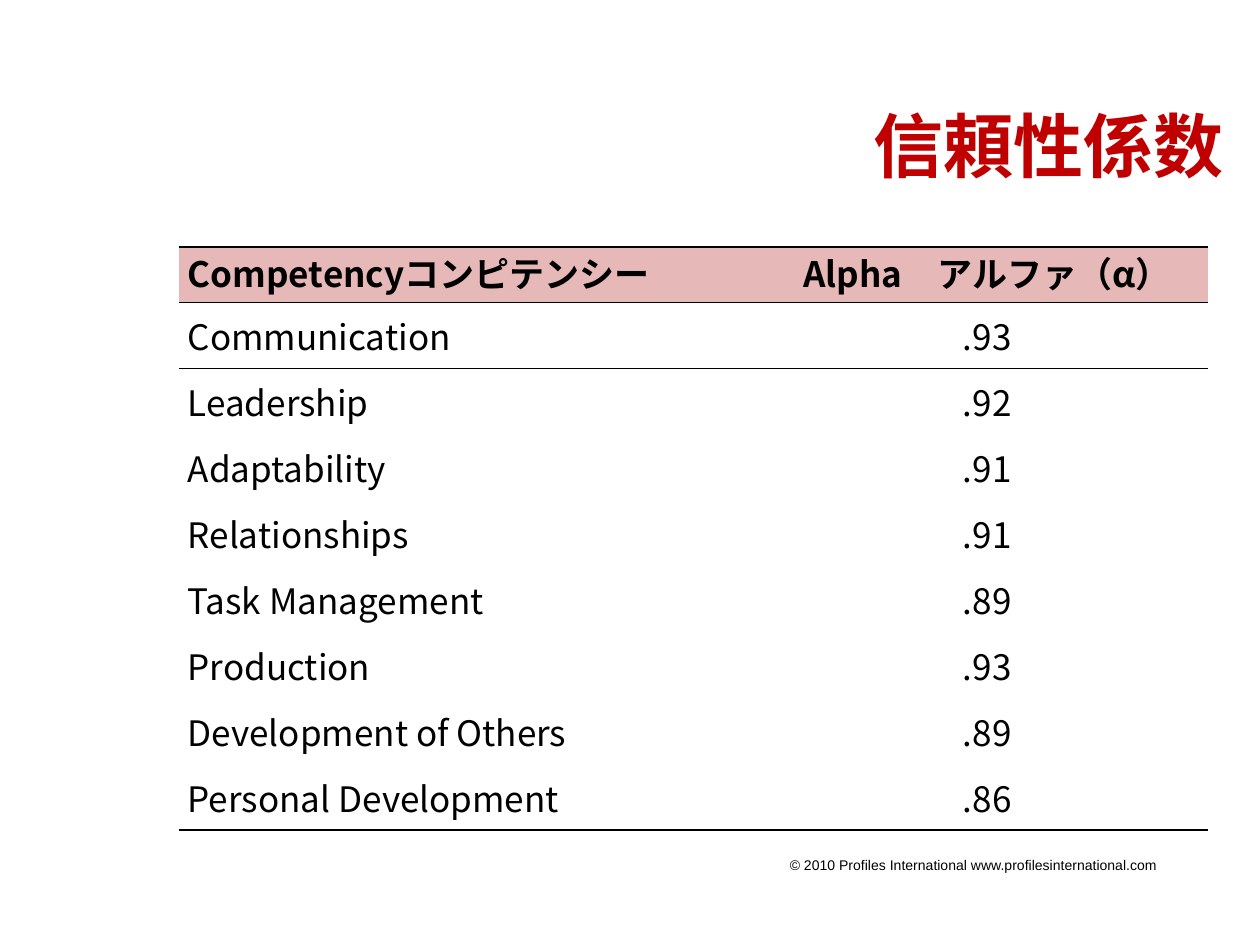
from lxml.etree import SubElement
from pptx import Presentation
from pptx.dml.color import RGBColor
from pptx.enum.text import MSO_ANCHOR as Anchor, PP_ALIGN as Align
from pptx.oxml.ns import qn
from pptx.util import Inches, Pt

COLORS = {"title": "C00000", "text": "000000", "head": "E6B9B8"}
SANS = "Noto Sans CJK JP"
PLAIN = "{2D5ABB26-0587-4C30-8999-92F81FD0307C}"  # table style without lines or fills
ROWS = [
    ("Competencyコンピテンシー", "Alpha　アルファ（α）"),
    ("Communication", ".93"),
    ("Leadership", ".92"),
    ("Adaptability", ".91"),
    ("Relationships", ".91"),
    ("Task Management", ".89"),
    ("Production", ".93"),
    ("Development of Others", ".89"),
    ("Personal Development", ".86"),
]


def write(frame, text, size, color="text", face=SANS, bold=False, align=Align.LEFT):
    frame.text = text
    para = frame.paragraphs[0]
    para.alignment = align
    for run in para.runs:
        font = run.font
        font.size, font.bold, font.name = Pt(size), bold, face
        font.color.rgb = RGBColor.from_string(COLORS[color])
        SubElement(run._r.get_or_add_rPr(), qn("a:ea"), typeface=face)


def add_rule(cell, side):
    """Draw a thin line on the "T" (top) or "B" (bottom) side of a cell."""
    props = cell._tc.get_or_add_tcPr()
    line = SubElement(props, qn(f"a:ln{side}"), w=str(Pt(1)))
    fill = SubElement(line, qn("a:solidFill"))
    SubElement(fill, qn("a:srgbClr"), val=COLORS["text"])


def fill_cell(cell, text, row, col):
    head, last = row == 0, row == len(ROWS) - 1
    cell.margin_left = cell.margin_right = Inches(0.07)
    cell.margin_top = cell.margin_bottom = 0
    cell.vertical_anchor = Anchor.TOP if head else Anchor.MIDDLE
    write(cell.text_frame, text, 20, bold=head,
          align=Align.CENTER if col else Align.LEFT)
    if row <= 1:
        add_rule(cell, "T")
    if head or last:
        add_rule(cell, "B")
    if head:
        cell.fill.solid()
        cell.fill.fore_color.rgb = RGBColor.from_string(COLORS["head"])
    else:
        cell.fill.background()


def add_title(slide, text):
    title = slide.shapes.title
    title.left, title.top = Inches(1.91), Inches(0.75)
    title.width, title.height = Inches(7.9), Inches(0.8)
    title.text_frame.vertical_anchor = Anchor.MIDDLE
    write(title.text_frame, text, 40, "title", bold=True, align=Align.RIGHT)


def add_scores(slide):
    high, head = 4.63, 0.44
    frame = slide.shapes.add_table(len(ROWS), 2, Inches(1.42), Inches(1.96),
                                   Inches(8.17), Inches(high))
    table = frame.table
    table.first_row = table.horz_banding = False
    table._tbl.tblPr.find(qn("a:tableStyleId")).text = PLAIN
    for col, width in zip(table.columns, (4.66, 3.51)):
        col.width = Inches(width)
    step = (high - head) / (len(ROWS) - 1)
    for r, texts in enumerate(ROWS):
        table.rows[r].height = Inches(step if r else head)
        for c, text in enumerate(texts):
            fill_cell(table.cell(r, c), text, r, c)


def add_footer(slide, text):
    box = slide.shapes.add_textbox(Inches(6.17), Inches(6.75), Inches(3.37), Inches(0.54))
    box.text_frame.word_wrap = True
    write(box.text_frame, text, 8, face="Arial")


def main():
    deck = Presentation()
    deck.slide_width, deck.slide_height = Inches(10), Inches(7.5)
    slide = deck.slides.add_slide(deck.slide_layouts[5])
    add_title(slide, "信頼性係数")
    add_scores(slide)
    add_footer(slide, "© 2010 Profiles International www.profilesinternational.com")
    deck.save("out.pptx")


if __name__ == "__main__":
    main()
